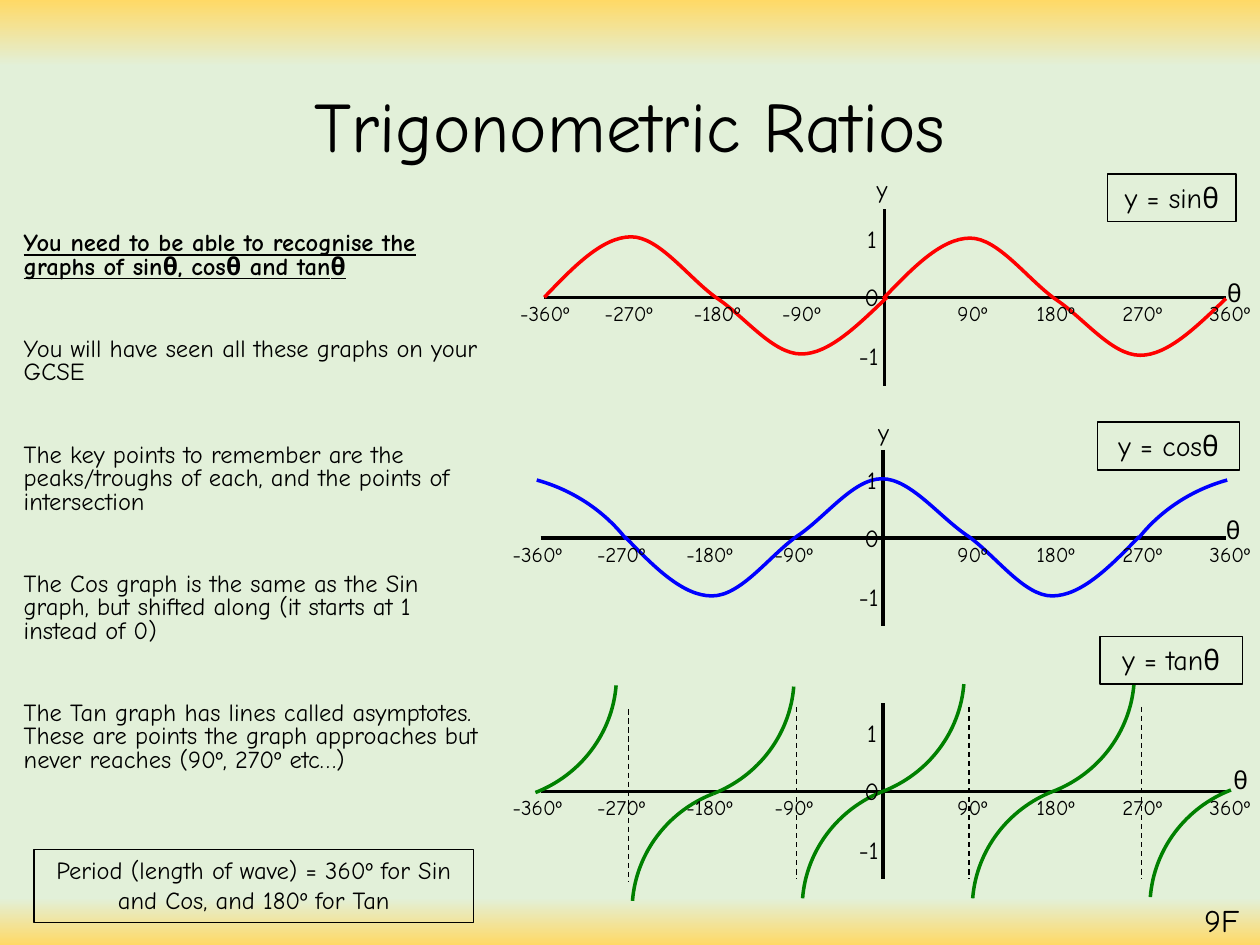
from copy import deepcopy
from dataclasses import dataclass

from lxml import etree
from pptx import Presentation
from pptx import util as u
from pptx.dml.color import RGBColor
from pptx.enum import dml, lang, shapes, text
from pptx.oxml import parse_xml
from pptx.oxml.ns import nsdecls, qn
from pptx.util import Inches


@dataclass
class Theme:
    font: str = "Comic Neue"
    ink: str = "000000"
    sine: str = "FF0000"
    cosine: str = "0000FF"
    tangent: str = "008000"
    edge: str = "FFD966"
    page: str = "E2F0D9"
    title_size: float = 40.5
    page_size: int = 18
    formula_size: int = 16
    body_size: int = 14
    label_size: int = 12


theme = Theme()
presentation = Presentation()
presentation.slide_width, presentation.slide_height = Inches(10), Inches(7.5)
slide = presentation.slides.add_slide(presentation.slide_layouts[5])


def add_text(lines, left, top, width, height, size, align="LEFT", border=False, wrap=True):
    """Add a text box with one paragraph per line, outlined if border is set."""
    if border:
        shape = slide.shapes.add_shape(shapes.MSO_SHAPE.RECTANGLE, Inches(left), Inches(top),
                                       Inches(width), Inches(height))
        shape.shadow.inherit = False
        shape.fill.background()
        shape.line.color.rgb = RGBColor.from_string(theme.ink)
        shape.line.width = u.Pt(0.75)
    else:
        shape = slide.shapes.add_textbox(Inches(left), Inches(top), Inches(width), Inches(height))
    frame = shape.text_frame
    frame.text = "\n".join(lines)
    frame.word_wrap = wrap
    frame.auto_size = text.MSO_AUTO_SIZE.SHAPE_TO_FIT_TEXT
    frame.vertical_anchor = text.MSO_ANCHOR.TOP
    for paragraph in frame.paragraphs:
        paragraph.alignment = text.PP_ALIGN[align]
        paragraph.font.name = theme.font
        paragraph.font.size = u.Pt(size)
        paragraph.font.color.rgb = RGBColor.from_string(theme.ink)
    return frame


def add_curve(points, color, corner=None):
    """Draw joined Bezier curves; a corner adds the unstroked sector of an arc."""
    outline = [(Inches(x), Inches(y)) for x, y in points + ([corner] if corner else [])]
    builder = slide.shapes.build_freeform(*outline[0])
    builder.add_line_segments(outline[1:], close=False)
    shape = builder.convert_to_shape()
    shape.shadow.inherit = False
    shape.fill.background()
    shape.line.color.rgb = RGBColor.from_string(color)
    shape.line.width = u.Pt(2)
    # Turn every three straight segments into one cubic curve
    stroke = shape._element.find(".//" + qn("a:path"))
    segments = stroke.findall(qn("a:lnTo"))
    for i in range(0, len(points) - 1, 3):
        curve = etree.SubElement(stroke, qn("a:cubicBezTo"))
        for segment in segments[i:i + 3]:
            curve.append(segment[0])
            stroke.remove(segment)
    if corner:
        stroke.append(segments[-1])
        sector = deepcopy(stroke)
        sector.set("stroke", "0")
        etree.SubElement(sector, qn("a:close"))
        stroke.addnext(sector)
        stroke.remove(segments[-1])
        stroke.set("fill", "none")


# Background: yellow bands fading into green
fill = slide.background.fill
fill.gradient()
fill.gradient_angle = 270
stops = slide.element.find(".//" + qn("a:gsLst"))
for stop in list(stops):
    stops.remove(stop)
for percent, color in ((0, theme.edge), (7, theme.page), (95, theme.page), (100, theme.edge)):
    stops.append(parse_xml(f'<a:gs {nsdecls("a")} pos="{percent * 1000}">'
                           f'<a:srgbClr val="{color}"/></a:gs>'))

# Title
title = slide.shapes.title
title.left, title.top, title.width, title.height = (Inches(n) for n in (0.69, 0.48, 8.62, 1.09))
title.text_frame.text = "Trigonometric Ratios"
title.text_frame.vertical_anchor = text.MSO_ANCHOR.MIDDLE
paragraph = title.text_frame.paragraphs[0]
paragraph.alignment = text.PP_ALIGN.CENTER
paragraph.line_spacing = 0.9
paragraph.font.name = theme.font
paragraph.font.size = u.Pt(theme.title_size)
paragraph.font.color.rgb = RGBColor.from_string(theme.ink)

# Explanation on the left, with the Greek letters of the heading marked as Greek
body = add_text([
    "",
    "You will have seen all these graphs on your GCSE",
    "The key points to remember are the peaks/troughs of each, and the points of intersection",
    "The Cos graph is the same as the Sin graph, but shifted along (it starts at 1 instead of 0)",
    "The Tan graph has lines called asymptotes. These are points the graph approaches but "
    "never reaches (90º, 270º etc…)",
], 0.09, 1.8, 3.83, 4.9, theme.body_size)
body.auto_size = text.MSO_AUTO_SIZE.NONE
for paragraph in body.paragraphs:
    paragraph.line_spacing = 0.8
    paragraph.space_before = u.Pt(33.5)
heading = body.paragraphs[0]
heading.space_before = u.Pt(0)
heading.font.bold = heading.font.underline = True
for part in ("You need to be able to recognise the graphs of sin", "θ", ", cos", "θ", " and tan", "θ"):
    run = heading.add_run()
    run.text = part
    run.font.language_id = (lang.MSO_LANGUAGE_ID.GREEK if part == "θ"
                            else lang.MSO_LANGUAGE_ID.ENGLISH_UK)

add_text(["Period (length of wave) = 360º for Sin and Cos, and 180º for Tan"],
         0.27, 6.74, 3.49, 0.58, theme.body_size, "CENTER", border=True)

# Axes and asymptotes: x1, y1, x2, y2, width, dashed
sine_y, cosine_y, tangent_y = 2.36, 4.27, 6.28
lines = []
for axis_y, start, middle, weight in ((sine_y, 4.32, 7.02, 2.25), (cosine_y, 4.29, 7.01, 2),
                                      (tangent_y, 4.29, 7.01, 2)):
    lines += [(start, axis_y, middle, axis_y, 2, False),
              (middle, axis_y, 9.73, axis_y, 2, False),
              (middle, axis_y - 0.7, middle, axis_y + 0.7, weight, False)]
lines += [(x, top, x, top + 1.37, 0.75, True)
          for x, top in ((4.99, 5.63), (6.32, 5.61), (7.69, 5.61), (9.06, 5.61))]
for x1, y1, x2, y2, weight, dashed in lines:
    connector = slide.shapes.add_connector(shapes.MSO_CONNECTOR.STRAIGHT, Inches(x1), Inches(y1),
                                           Inches(x2), Inches(y2))
    connector.line.color.rgb = RGBColor.from_string(theme.ink)
    connector.line.width = u.Pt(weight)
    if dashed:
        connector.line.dash_style = dml.MSO_LINE.DASH
    connector._element.spPr.append(parse_xml(f'<a:effectLst {nsdecls("a")}/>'))

# Sine: the same wave on each side of the y axis
wave = [(0, 0), (0.23, -0.24), (0.46, -0.48), (0.69, -0.48), (0.91, -0.48), (1.14, -0.16),
        (1.36, 0), (1.59, 0.15), (1.81, 0.45), (2.04, 0.45), (2.26, 0.45), (2.49, 0.22), (2.72, 0)]
for x, y in ((4.32, 2.36), (7.01, 2.37)):
    add_curve([(x + dx, y + dy) for dx, dy in wave], theme.sine)

# Cosine: a central wave and two mirrored ends
add_curve([(4.96, 4.26), (5.19, 4.5), (5.42, 4.73), (5.65, 4.73), (5.88, 4.73), (6.1, 4.42),
           (6.32, 4.26), (6.55, 4.11), (6.77, 3.8), (7, 3.8), (7.23, 3.8), (7.46, 4.11),
           (7.69, 4.26), (7.91, 4.42), (8.13, 4.73), (8.35, 4.73), (8.58, 4.73), (8.81, 4.5),
           (9.04, 4.26)], theme.cosine)
for side in (-1, 1):
    add_curve([(7 + side * dx, y) for dx, y in
               ((2.74, 3.81), (2.45, 3.89), (2.2, 4.06), (2.03, 4.28))],
              theme.cosine, corner=(7 + side * 3.18, 5))

# Tangent: a rising and a falling arm at each zero, within the range shown
arm = [(0.64, -0.85), (0.61, -0.47), (0.36, -0.14), (0, 0)]
for x, y, sides in ((4.25, 6.29, (1,)), (5.66, 6.3, (1, -1)), (7.01, 6.28, (1, -1)),
                    (8.36, 6.28, (1, -1)), (9.77, 6.27, (-1,))):
    for side in sides:
        add_curve([(x + side * dx, y + side * dy) for dx, dy in arm], theme.tangent,
                  corner=(x - side * 0.36, y - side * 0.94))

# Axis labels
angles = [("-360º", 3.97, 0.68), ("-270º", 4.64, 0.68), ("-180º", 5.35, 0.66), ("-90º", 6.05, 0.56),
          ("90º", 7.5, 0.49), ("180º", 8.13, 0.56), ("270º", 8.81, 0.68), ("360º", 9.5, 0.68)]
values = [("1", 6.75, -0.63, 0.34), ("0", 6.75, -0.17, 0.34), ("-1", 6.69, 0.3, 0.41)]
for axis_y, negative_shift in ((sine_y, 0.06), (cosine_y, 0), (tangent_y, 0)):
    for label, left, width in angles:
        shift = negative_shift if label.startswith("-") else 0
        add_text([label], left + shift, axis_y - 0.02, width, 0.3, theme.label_size)
    for label, left, offset, width in values:
        add_text([label], left, axis_y + offset, width, 0.33, theme.body_size, "CENTER")
for label, left, top in (("y", 6.86, 1.33), ("y", 6.87, 3.26),
                         ("θ", 9.64, 2.16), ("θ", 9.63, 4.04), ("θ", 9.69, 6.02)):
    add_text([label], left, top, 0.31, 0.33, theme.body_size)

# Formula boxes
for formula, left, top, width in (("y = sinθ", 8.79, 1.38, 1.02), ("y = cosθ", 8.71, 3.35, 1.13),
                                  ("y = tanθ", 8.73, 5.05, 1.13)):
    add_text([formula], left, top, width, 0.38, theme.formula_size, "CENTER", border=True)

# Section mark
add_text(["9F"], 9.46, 7.1, 0.51, 0.4, theme.page_size, wrap=False)

presentation.save("out.pptx")
